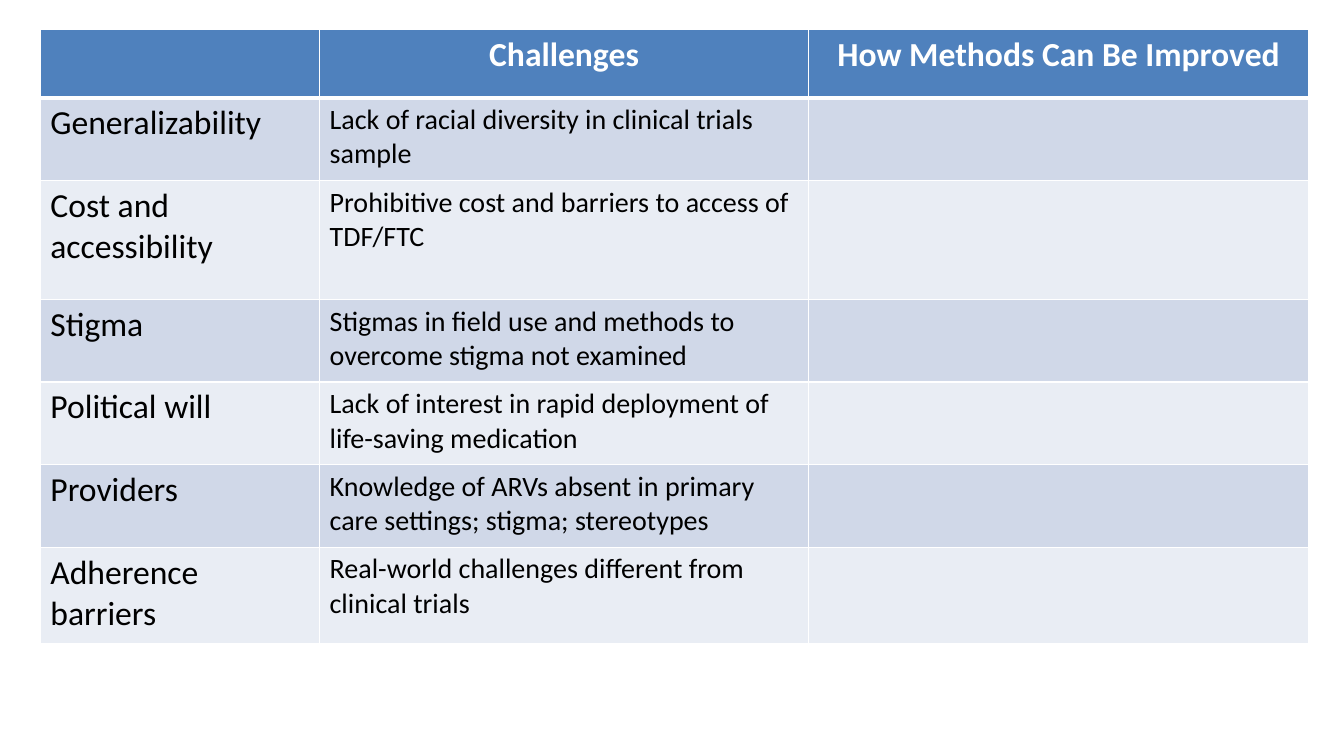
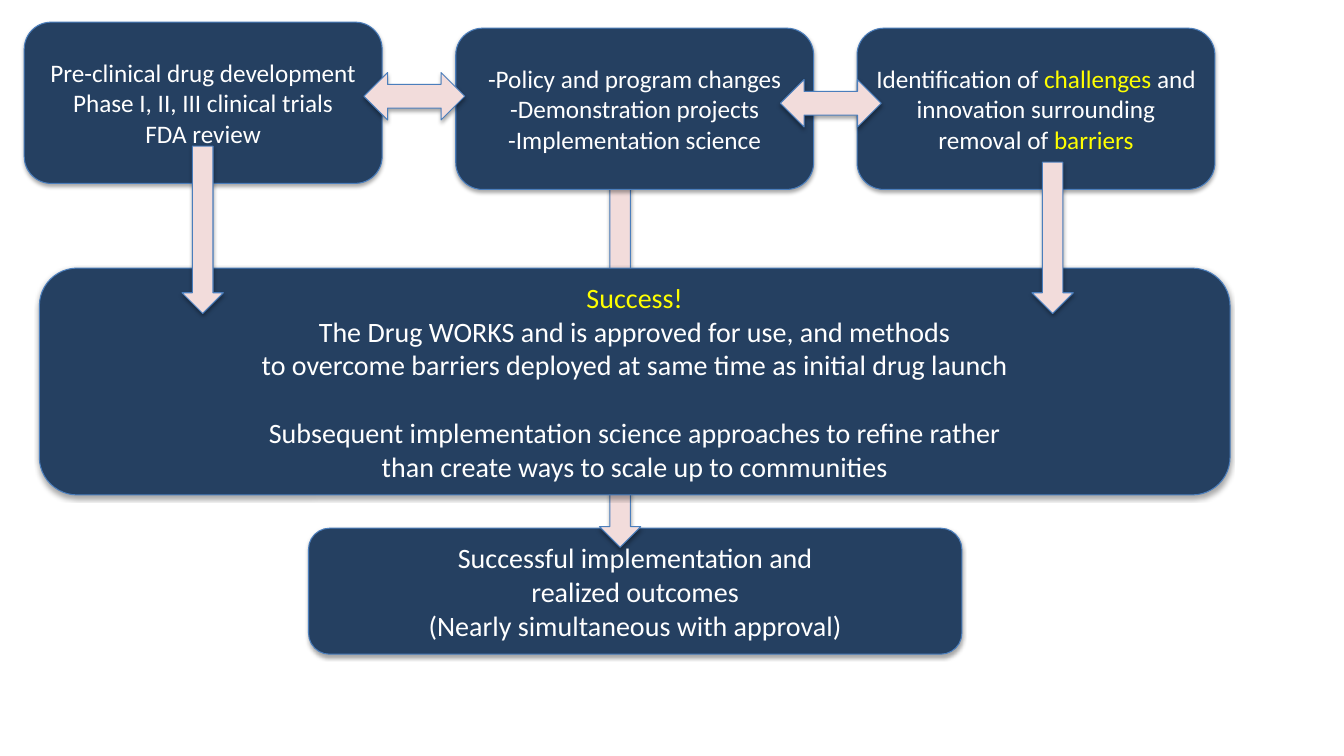
from lxml.etree import SubElement
from pptx import Presentation
from pptx.dml.color import RGBColor
from pptx.enum.shapes import MSO_SHAPE
from pptx.enum.text import MSO_ANCHOR, PP_ALIGN
from pptx.oxml.ns import qn
from pptx.util import Inches, Pt

# Shared look
FONT = "Calibri"
WHITE, BLACK, YELLOW = "FFFFFF", "000000", "FFFF00"
HEAD, BANDS = "4F81BD", ("D0D8E8", "E9EDF4")
NAVY, PINK, EDGE = "254061", "F2DCDB", "4B7EBC"

# Table content
WIDTHS = (2.77, 4.85, 4.96)
HEIGHTS = (0.68, 0.82, 1.18, 0.82, 0.82, 0.82, 0.96)
ROWS = (
    ("", "Challenges", "How Methods Can Be Improved"),
    ("Generalizability",
     "Lack of racial diversity in clinical trials sample", ""),
    ("Cost and accessibility",
     "Prohibitive cost and barriers to access of TDF/FTC", ""),
    ("Stigma",
     "Stigmas in field use and methods to overcome stigma not examined", ""),
    ("Political will",
     "Lack of interest in rapid deployment of life-saving medication", ""),
    ("Providers",
     "Knowledge of ARVs absent in primary care settings; stigma; stereotypes",
     ""),
    ("Adherence barriers",
     "Real-world challenges different from clinical trials", ""),
)


def paint(target, color):
    """Give a fill or a line one solid colour."""
    target.solid()
    target.fore_color.rgb = RGBColor.from_string(color)


def add_run(para, text, size, color, bold=False):
    run = para.add_run()
    run.text = text
    run.font.name = FONT
    run.font.size = Pt(size)
    run.font.bold = bold
    run.font.color.rgb = RGBColor.from_string(color)


# Table parts
def add_rule(cell, side, width):
    line = SubElement(cell._tc.get_or_add_tcPr(), qn(f"a:ln{side}"),
                      w=str(Pt(width)))
    fill = SubElement(line, qn("a:solidFill"))
    SubElement(fill, qn("a:srgbClr"), val=WHITE)


def fill_cell(cell, text, row, col):
    top, base = (3 if row == 1 else 1), (3 if row == 0 else 1)
    for side, width in (("L", 1), ("R", 1), ("T", top), ("B", base)):
        add_rule(cell, side, width)
    first = row == 0
    paint(cell.fill, HEAD if first else BANDS[(row - 1) % 2])
    if text:
        para = cell.text_frame.paragraphs[0]
        if first:
            para.alignment = PP_ALIGN.CENTER
        add_run(para, text, 24 if first or col == 0 else 20,
                WHITE if first else BLACK, first)


def add_grid(slide, left, top):
    table = slide.shapes.add_table(
        len(ROWS), len(WIDTHS), Inches(left), Inches(top),
        Inches(sum(WIDTHS)), Inches(sum(HEIGHTS))).table
    for col, width in zip(table.columns, WIDTHS):
        col.width = Inches(width)
    for row, height in zip(table.rows, HEIGHTS):
        row.height = Inches(height)
    for row, texts in enumerate(ROWS):
        for col, text in enumerate(texts):
            fill_cell(table.cell(row, col), text, row, col)


# Diagram parts
def add_shadow(shape):
    shape.shadow.inherit = False
    effects = shape._element.spPr.find(qn("a:effectLst"))
    shadow = SubElement(effects, qn("a:outerShdw"), blurRad=str(Pt(3.1)),
                        dist=str(Pt(1.8)), dir="5400000", rotWithShape="0")
    color = SubElement(shadow, qn("a:srgbClr"), val=BLACK)
    SubElement(color, qn("a:alpha"), val="35000")


def add_form(slide, kind, place, color):
    shape = slide.shapes.add_shape(kind, *map(Inches, place))
    paint(shape.fill, color)
    paint(shape.line.fill, EDGE)
    shape.line.width = Pt(0.75)
    add_shadow(shape)
    return shape


def add_box(slide, place, size, lines, gap=None):
    """Each line is a string or a list of (text, colour); gap opens above one."""
    box = add_form(slide, MSO_SHAPE.ROUNDED_RECTANGLE, place, NAVY)
    frame = box.text_frame
    frame.word_wrap = True
    frame.vertical_anchor = MSO_ANCHOR.MIDDLE
    for i, line in enumerate(lines):
        para = frame.add_paragraph() if i else frame.paragraphs[0]
        para.alignment = PP_ALIGN.CENTER
        if i == gap:
            para.space_before = Pt(size * 1.22)
        for text, color in [(line, WHITE)] if isinstance(line, str) else line:
            add_run(para, text, size, color)


def add_down(slide, mid, top, length, width=0.41):
    """Arrow pointing down, centred on mid."""
    place = (mid - length / 2, top + (length - width) / 2, length, width)
    add_form(slide, MSO_SHAPE.RIGHT_ARROW, place, PINK).rotation = 90


def add_link(slide, left, top):
    add_form(slide, MSO_SHAPE.LEFT_RIGHT_ARROW, (left, top, 1, 0.47), PINK)


def draw_flow(slide):
    # Outcome, with the long arrow that runs behind the other boxes
    add_box(slide, (3.06, 5.24, 6.48, 1.25), 20,
            ("Successful implementation and", "realized outcomes",
             "(Nearly simultaneous with approval)"))
    add_down(slide, 6.15, 1.58, 3.85)

    # Top row
    steps = (
        (0.24, 0.22, ("Pre-clinical drug development",
                      "Phase I, II, III clinical trials", "FDA review")),
        (4.52, 0.28, ("-Policy and program changes",
                      "-Demonstration projects", "-Implementation science")),
        (8.5, 0.28, ([("Identification of ", WHITE), ("challenges", YELLOW),
                      (" and innovation surrounding removal of ", WHITE),
                      ("barriers", YELLOW)],)),
    )
    for left, top, lines in steps:
        add_box(slide, (left, top, 3.55, 1.6), 18, lines)

    # Success band
    add_box(slide, (0.39, 2.66, 11.81, 2.25), 20,
            ([("Success!", YELLOW)],
             "The Drug WORKS and is approved for use, and methods",
             "to overcome barriers deployed at same time as initial drug launch",
             "Subsequent implementation science approaches to refine rather",
             "than create ways to scale up to communities"), gap=3)

    # Arrows in front
    add_down(slide, 2.01, 1.45, 1.66)
    add_link(slide, 3.61, 0.72)
    add_link(slide, 7.74, 0.79)
    add_down(slide, 10.44, 1.61, 1.5)


def main():
    deck = Presentation()
    deck.slide_width, deck.slide_height = Inches(13.33), Inches(7.5)
    blank = deck.slide_layouts[6]
    add_grid(deck.slides.add_slide(blank), 0.4, 0.29)
    draw_flow(deck.slides.add_slide(blank))
    deck.save("out.pptx")


if __name__ == "__main__":
    main()
